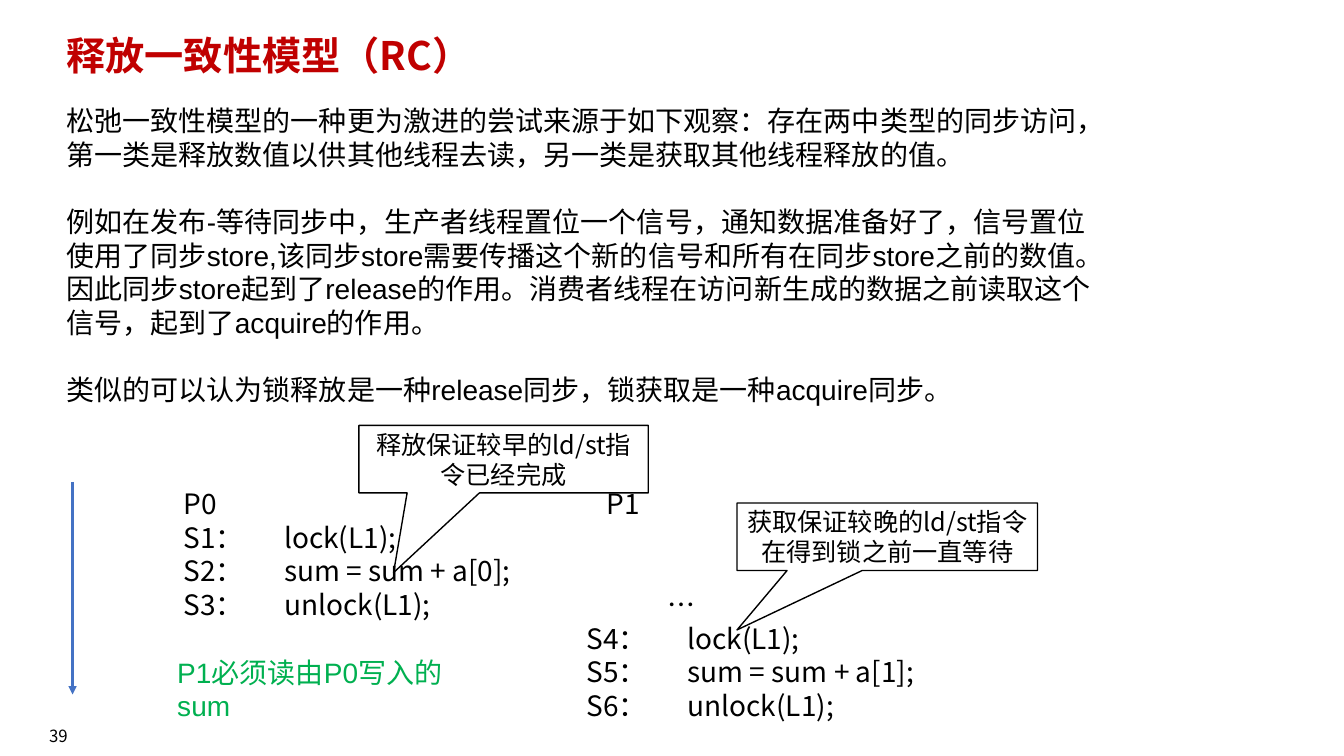
from dataclasses import dataclass

from lxml import etree
from pptx import Presentation
from pptx.dml.color import RGBColor
from pptx.enum.shapes import MSO_CONNECTOR, MSO_SHAPE
from pptx.enum.text import MSO_ANCHOR, MSO_AUTO_SIZE, PP_ALIGN
from pptx.oxml.ns import qn
from pptx.util import Inches, Pt

LEFT, CENTER = PP_ALIGN.LEFT, PP_ALIGN.CENTER
TOP, MIDDLE = MSO_ANCHOR.TOP, MSO_ANCHOR.MIDDLE
NO_AUTOFIT = MSO_AUTO_SIZE.NONE
CALLOUT = MSO_SHAPE.RECTANGULAR_CALLOUT
STRAIGHT = MSO_CONNECTOR.STRAIGHT


@dataclass(frozen=True)
class Theme:
    black: str = "000000"
    white: str = "FFFFFF"
    red: str = "C00000"
    green: str = "00B050"
    blue: str = "4472C4"
    title_size: int = 28
    body_size: int = 20
    callout_size: int = 18
    number_size: int = 12
    line_pitch: int = 24
    sans: str = "Arial"
    cjk: str = "Noto Sans CJK SC"


THEME = Theme()

TITLE = "释放一致性模型（RC）"
BODY = [
    "松弛一致性模型的一种更为激进的尝试来源于如下观察：存在两中类型的同步访问，"
    "第一类是释放数值以供其他线程去读，另一类是获取其他线程释放的值。",
    "例如在发布-等待同步中，生产者线程置位一个信号，通知数据准备好了，信号置位使用了同步store,"
    "该同步store需要传播这个新的信号和所有在同步store之前的数值。因此同步store起到了release的作用。"
    "消费者线程在访问新生成的数据之前读取这个信号，起到了acquire的作用。",
    "类似的可以认为锁释放是一种release同步，锁获取是一种acquire同步。",
]
# Each code line: text, indent in inches, empty lines above it
THREADS = [
    (1.72, [("P0", 0, 0), ("S1：\tlock(L1);", 0, 0),
            ("S2：\tsum = sum + a[0];", 0, 0), ("S3：\tunlock(L1);", 0, 0)]),
    (5.72, [("P1", 0.2, 0), ("…", 0.8, 2), ("S4：\tlock(L1);", 0, 0),
            ("S5：\tsum = sum + a[1];", 0, 0), ("S6：\tunlock(L1);", 0, 0)]),
]
THREAD_TOP, THREAD_WIDTH, THREAD_HEIGHT = 4.78, 4.38, 2.46
CODE_TAB = 0.8
# Each callout: text, frame, tip offset from its centre, fill
CALLOUTS = [
    ("释放保证较早的ld/st指令已经完成", (3.56, 4.22, 2.87, 0.67), (-0.38, 1.68), None),
    ("获取保证较晚的ld/st指令在得到锁之前一直等待", (7.31, 4.99, 2.98, 0.67), (-0.5, 1.38), THEME.white),
]
CONCLUSION = "P1必须读由P0写入的sum"
PAGE_NUMBER = "39"


def place(shape, frame):
    shape.left, shape.top, shape.width, shape.height = map(Inches, frame)


def write(para, text, *, size=THEME.body_size, color=THEME.black, font=THEME.cjk,
          bold=False, align=LEFT, before=0, indent=0, tab=None, spacing=1.0):
    """Fill a paragraph; indent and tab are in inches, before is in points."""
    properties = para._p.get_or_add_pPr()
    properties.set("marL", str(Inches(indent)))
    properties.set("indent", "0")
    etree.SubElement(properties, qn("a:buNone"))
    if tab:
        stops = etree.SubElement(properties, qn("a:tabLst"))
        etree.SubElement(stops, qn("a:tab"), pos=str(Inches(tab)), algn="l")
    para.alignment = align
    para.line_spacing = spacing
    para.space_before = Pt(before)
    para.space_after = Pt(0)
    span = para.add_run()
    span.text = text
    span.font.size = Pt(size)
    span.font.bold = bold
    span.font.name = font
    span.font.color.rgb = RGBColor.from_string(color)
    east_asian = etree.Element(qn("a:ea"), typeface=THEME.cjk)
    span.font._element.find(qn("a:latin")).addnext(east_asian)


def prepare(box, anchor=TOP):
    frame = box.text_frame
    frame.word_wrap = True
    frame.auto_size = NO_AUTOFIT
    frame.vertical_anchor = anchor
    return frame


def next_paragraph(frame, index):
    return frame.add_paragraph() if index else frame.paragraphs[0]


def add_text(page, frame, text, anchor=TOP, **formatting):
    box = page.shapes.add_textbox(*map(Inches, frame))
    write(prepare(box, anchor).paragraphs[0], text, **formatting)


def add_thread(page, left, lines):
    frame = (left, THREAD_TOP, THREAD_WIDTH, THREAD_HEIGHT)
    text_frame = prepare(page.shapes.add_textbox(*map(Inches, frame)))
    for index, (text, indent, gap) in enumerate(lines):
        write(next_paragraph(text_frame, index), text, indent=indent,
              before=gap * THEME.line_pitch, tab=CODE_TAB)


def add_callout(page, text, frame, tip, fill):
    box = page.shapes.add_shape(CALLOUT, *map(Inches, frame))
    box.adjustments[0], box.adjustments[1] = tip
    box.shadow.inherit = False
    if fill:
        box.fill.solid()
        box.fill.fore_color.rgb = RGBColor.from_string(fill)
    else:
        box.fill.background()
    box.line.color.rgb = RGBColor.from_string(THEME.black)
    box.line.width = Pt(1)
    write(prepare(box, MIDDLE).paragraphs[0], text, size=THEME.callout_size, align=CENTER)


def add_time_arrow(page, left, top, bottom):
    arrow = page.shapes.add_connector(
        STRAIGHT, Inches(left), Inches(top), Inches(left), Inches(bottom))
    arrow.line.color.rgb = RGBColor.from_string(THEME.blue)
    arrow.line.width = Pt(1.75)
    etree.SubElement(arrow.line._get_or_add_ln(), qn("a:tailEnd"), type="triangle")
    etree.SubElement(arrow._element.spPr, qn("a:effectLst"))


def main():
    deck = Presentation()
    deck.slide_width, deck.slide_height = Inches(13.33), Inches(7.5)
    page = deck.slides.add_slide(deck.slide_layouts[1])

    title, body = page.placeholders
    place(title, (0.56, 0.31, 11.5, 0.65))
    write(prepare(title).paragraphs[0], TITLE, size=THEME.title_size,
          color=THEME.red, bold=True, spacing=0.9)
    place(body, (0.56, 0.98, 10.38, 3.13))
    body_frame = prepare(body)
    for index, text in enumerate(BODY):
        write(next_paragraph(body_frame, index), text, font=THEME.sans,
              before=THEME.line_pitch if index else 0)

    for left, lines in THREADS:
        add_thread(page, left, lines)
    for callout in CALLOUTS:
        add_callout(page, *callout)
    add_time_arrow(page, 0.72, 4.78, 6.89)
    add_text(page, (1.66, 6.45, 3.33, 0.77), CONCLUSION, font=THEME.sans, color=THEME.green)
    add_text(page, (0, 7.1, 1.16, 0.4), PAGE_NUMBER, MIDDLE,
             size=THEME.number_size, align=CENTER)
    deck.save("out.pptx")


if __name__ == "__main__":
    main()
